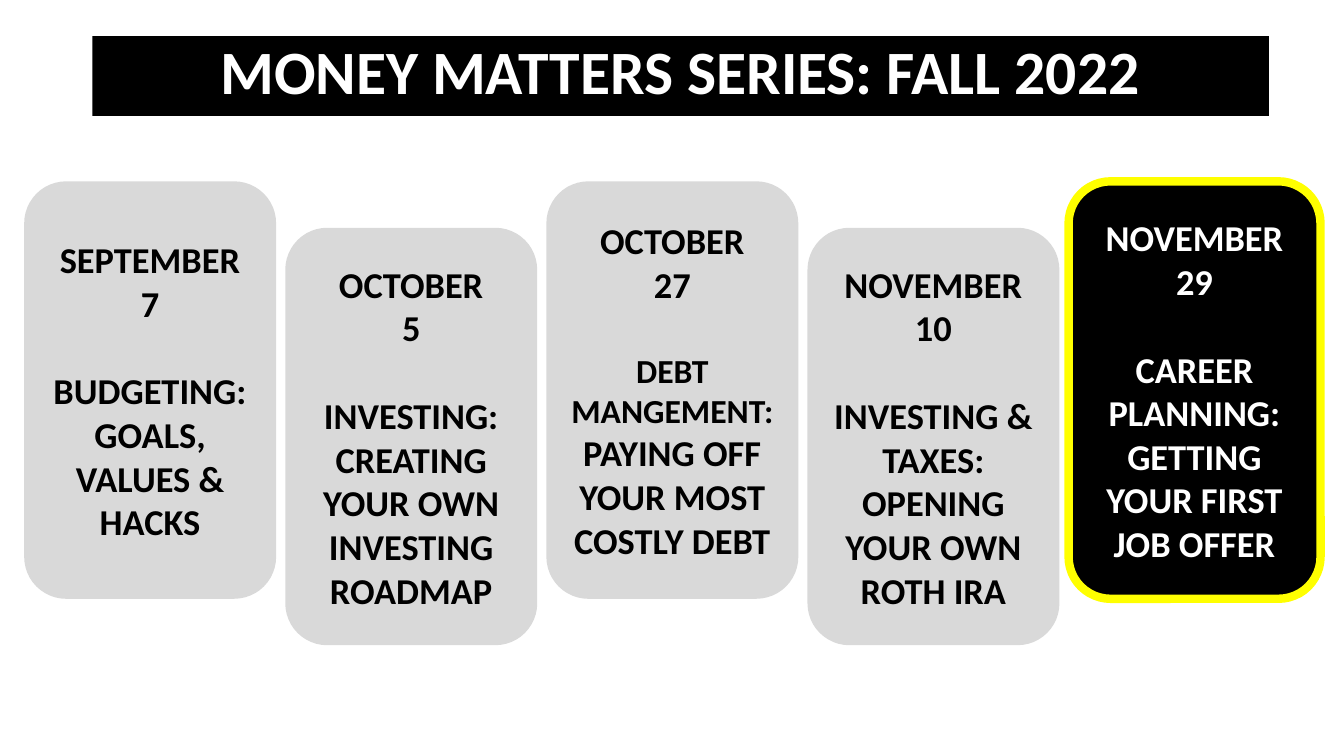
from pptx import Presentation
from pptx.dml.color import RGBColor
from pptx.enum.shapes import MSO_SHAPE as SHAPE
from pptx.enum.text import MSO_ANCHOR as ANCHOR, PP_ALIGN as ALIGN
from pptx.util import Cm, Pt


def rgb(value):
    return RGBColor.from_string(value)


def add_run(p, text, size, color):
    for i, line in enumerate(text.split("\n")):
        if i:
            p.add_line_break()
        r = p.add_run()
        r.text = line
        r.font.name = "Calibri"
        r.font.size = Pt(size)
        r.font.bold = True
        r.font.color.rgb = rgb(color)


prs = Presentation()
prs.slide_width = Cm(33.87)
prs.slide_height = Cm(19.05)
s = prs.slides.add_slide(prs.slide_layouts[6])

sp = s.shapes.add_shape(SHAPE.RECTANGLE, Cm(2.33), Cm(0.91), Cm(29.65), Cm(2.01))
sp.shadow.inherit = False
sp.fill.solid()
sp.fill.fore_color.rgb = rgb("000000")
sp.line.fill.background()
tf = sp.text_frame
tf.word_wrap = True
tf.vertical_anchor = ANCHOR.TOP
p = tf.paragraphs[0]
p.alignment = ALIGN.CENTER
p.line_spacing = 0.9
add_run(p, "MONEY MATTERS SERIES: FALL 2022", 44, "FFFFFF")

sessions = [
    ("SEPTEMBER\n7", [[("BUDGETING:", 26)], [("GOALS, VALUES & HACKS", 26)]]),
    ("OCTOBER\n5", [[("INVESTING:", 26)],
                    [("CREATING YOUR OWN INVESTING ROADMAP", 26)]]),
    ("OCTOBER\n27", [[("DEBT MANGEMENT: ", 24),
                      ("PAYING OFF YOUR MOST COSTLY DEBT", 26)]]),
    ("NOVEMBER 10", [[("INVESTING & TAXES:\nOPENING YOUR OWN ROTH IRA", 26)]]),
    ("NOVEMBER\n29", [[("CAREER PLANNING: GETTING YOUR FIRST JOB OFFER", 26)]]),
]

for i, (date, topic) in enumerate(sessions):
    highlighted = i == len(sessions) - 1
    color = "FFFFFF" if highlighted else "000000"
    top = 5.74 if i % 2 else 4.57
    sp = s.shapes.add_shape(SHAPE.ROUNDED_RECTANGLE,
                            Cm(0.61 + 6.58 * i), Cm(top), Cm(6.35), Cm(10.52))
    sp.shadow.inherit = False
    sp.fill.solid()
    sp.fill.fore_color.rgb = rgb("000000" if highlighted else "D9D9D9")
    if highlighted:
        sp.line.color.rgb = rgb("FFFF00")
        sp.line.width = Pt(6)
    else:
        sp.line.fill.background()
    tf = sp.text_frame
    tf.word_wrap = True
    tf.vertical_anchor = ANCHOR.MIDDLE
    p = tf.paragraphs[0]
    p.alignment = ALIGN.CENTER
    add_run(p, date, 26, color)
    for j, runs in enumerate(topic):
        p = tf.add_paragraph()
        p.alignment = ALIGN.CENTER
        if j == 0:
            p.space_before = Pt(31.5)
        for text, size in runs:
            add_run(p, text, size, color)

prs.save("out.pptx")
